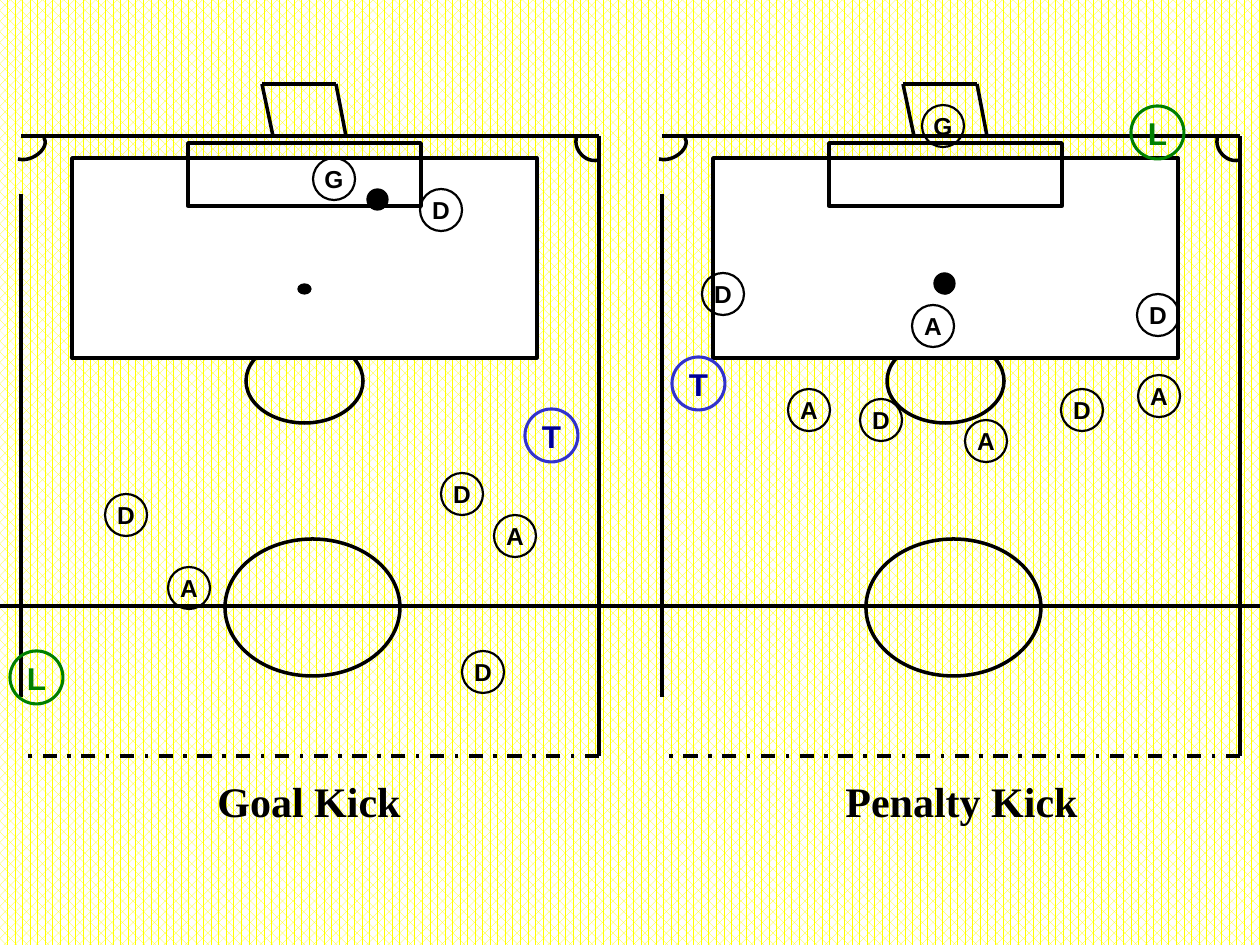
"""Draw the referee positions for a goal kick and a penalty kick."""
from typing import NamedTuple

import lxml.etree
import pptx
import pptx.dml.color
import pptx.enum.dml
import pptx.enum.shapes
import pptx.enum.text
import pptx.oxml.ns
import pptx.util

SCALE = 914400 / 126
WIDTH, HEIGHT = 1260, 945
PITCH_STEP = 641
COLORS = {"black": "000000", "white": "FFFFFF", "yellow": "FFFF00",
          "green": "008000", "blue": "3333CC", "navy": "000099"}
SHAPE = pptx.enum.shapes.MSO_SHAPE
DASH = pptx.enum.dml.MSO_LINE


class Style(NamedTuple):
    size: int
    pt: int
    line: str
    text: str
    weight: float


class Marker(NamedTuple):
    label: str
    x: int
    y: int


class Title(NamedTuple):
    text: str
    x: int
    width: int


class Segment(NamedTuple):
    x1: int
    y1: int
    x2: int
    y2: int
    dash: bool = False


class Marking(NamedTuple):
    kind: SHAPE
    x: int
    y: int
    w: int
    h: int
    fill: str = ""
    weight: float = 2


PLAYER = Style(42, 14, "black", "black", 1.25)
STYLES = {"L": Style(53, 18, "green", "green", 1.75),
          "T": Style(53, 18, "blue", "navy", 1.75)}

SEGMENTS = [
    Segment(21, 136, 599, 136),
    Segment(21, 194, 21, 697),
    Segment(599, 136, 599, 756),
    Segment(-43, 606, 662, 606),
    Segment(336, 84, 346, 136),
    Segment(262, 84, 273, 136),
    Segment(262, 84, 336, 84),
    Segment(599, 756, 21, 756, True),
]
MARKINGS = [
    Marking(SHAPE.OVAL, 225, 539, 175, 137),
    Marking(SHAPE.OVAL, 246, 339, 117, 84),
    Marking(SHAPE.RECTANGLE, 72, 158, 465, 200, "white"),
    Marking(SHAPE.RECTANGLE, 188, 143, 233, 63),
    Marking(SHAPE.OVAL, 298, 284, 13, 10, "black", 0.75),
]
CORNERS = [
    [(18, 159), (32, 163), (50, 148), (44, 138)],
    [(577, 136), (572, 148), (585, 164), (599, 160)],
]
BALLS = [(367, 189), (934, 273)]
MARKERS = [
    Marker("G", 313, 158), Marker("L", 1131, 106), Marker("G", 922, 105),
    Marker("D", 1061, 389), Marker("A", 788, 389), Marker("D", 702, 273),
    Marker("A", 912, 305), Marker("D", 860, 399), Marker("L", 10, 651),
    Marker("D", 420, 189), Marker("D", 441, 473), Marker("A", 494, 515),
    Marker("A", 168, 567), Marker("D", 105, 494), Marker("D", 462, 651),
    Marker("A", 965, 420), Marker("A", 1138, 375), Marker("D", 1137, 294),
    Marker("T", 525, 409), Marker("T", 672, 357),
]
TITLES = [Title("Goal Kick", 205, 208), Title("Penalty Kick", 833, 257)]


def px(value: float) -> int:
    """Turn px into EMU."""
    return round(value * SCALE)


def rgb(name: str) -> pptx.dml.color.RGBColor:
    """Look up a colour."""
    return pptx.dml.color.RGBColor.from_string(COLORS[name])


def set_line(sp, color: str, weight: float) -> None:
    """Set the outline of a shape or connector."""
    sp.line.color.rgb = rgb(color)
    sp.line.width = pptx.util.Pt(weight)


def finish(sp, fill: str, line: str, weight: float) -> None:
    """Set fill and outline and drop the shadow."""
    sp.shadow.inherit = False
    if fill:
        sp.fill.solid()
        sp.fill.fore_color.rgb = rgb(fill)
    else:
        sp.fill.background()
    set_line(sp, line, weight)


def add_segment(s, seg: Segment, dx: int) -> None:
    """Draw one straight pitch line, kept within the slide."""
    x1, x2 = (min(max(x + dx, 0), WIDTH) for x in (seg.x1, seg.x2))
    sp = s.shapes.add_connector(pptx.enum.shapes.MSO_CONNECTOR.STRAIGHT,
                                px(x1), px(seg.y1), px(x2), px(seg.y2))
    set_line(sp, "black", 2)
    if seg.dash:
        sp.line.dash_style = DASH.DASH_DOT
    lxml.etree.SubElement(sp._element.spPr, pptx.oxml.ns.qn("a:effectLst"))


def add_marking(s, m: Marking, dx: int = 0) -> None:
    """Draw one rectangle or ellipse."""
    sp = s.shapes.add_shape(m.kind, px(m.x + dx), px(m.y), px(m.w), px(m.h))
    finish(sp, m.fill, "black", m.weight)


def add_corner(s, curve: list[tuple[int, int]], dx: int) -> None:
    """Draw a corner arc along a cubic curve."""
    steps = 12
    points = []
    for i in range(steps + 1):
        t = i / steps
        weights = ((1 - t) ** 3, 3 * t * (1 - t) ** 2, 3 * t * t * (1 - t), t ** 3)
        x, y = (sum(w * v for w, v in zip(weights, axis)) for axis in zip(*curve))
        points.append((px(x + dx), px(y)))
    builder = s.shapes.build_freeform(*points[0])
    builder.add_line_segments(points[1:], close=False)
    finish(builder.convert_to_shape(), "", "black", 2)


def write(sp, text: str, font: str, size: int, color: str) -> None:
    """Put one bold centred line of text in a shape."""
    tf = sp.text_frame
    tf.word_wrap = False
    tf.margin_left = tf.margin_right = tf.margin_top = tf.margin_bottom = 0
    tf.vertical_anchor = pptx.enum.text.MSO_ANCHOR.MIDDLE
    p = tf.paragraphs[0]
    p.text = text
    p.alignment = pptx.enum.text.PP_ALIGN.CENTER
    p.font.name, p.font.size, p.font.bold = font, pptx.util.Pt(size), True
    p.font.color.rgb = rgb(color)


def add_marker(s, m: Marker) -> None:
    """Draw a lettered player or official."""
    style = STYLES.get(m.label, PLAYER)
    sp = s.shapes.add_shape(SHAPE.OVAL, px(m.x), px(m.y), px(style.size), px(style.size))
    finish(sp, "", style.line, style.weight)
    write(sp, m.label, "Arial", style.pt, style.text)


def add_pitch(s, dx: int) -> None:
    """Draw one half pitch."""
    for seg in SEGMENTS:
        add_segment(s, seg, dx)
    for m in MARKINGS:
        add_marking(s, m, dx)
    for curve in CORNERS:
        add_corner(s, curve, dx)


def main() -> None:
    """Build and save the slide."""
    prs = pptx.Presentation()
    prs.slide_width, prs.slide_height = px(WIDTH), px(HEIGHT)
    s = prs.slides.add_slide(prs.slide_layouts[6])
    fill = s.background.fill
    fill.patterned()
    fill.pattern = pptx.enum.dml.MSO_PATTERN.PERCENT_60
    fill.fore_color.rgb, fill.back_color.rgb = rgb("yellow"), rgb("white")
    for i, title in enumerate(TITLES):
        add_pitch(s, i * PITCH_STEP)
        sp = s.shapes.add_textbox(px(title.x), px(769), px(title.width), px(63))
        write(sp, title.text, "Times New Roman", 24, "black")
    for x, y in BALLS:
        add_marking(s, Marking(SHAPE.OVAL, x, y, 21, 21, "black", 0.75))
    for m in MARKERS:
        add_marker(s, m)
    prs.save("out.pptx")


if __name__ == "__main__":
    main()
